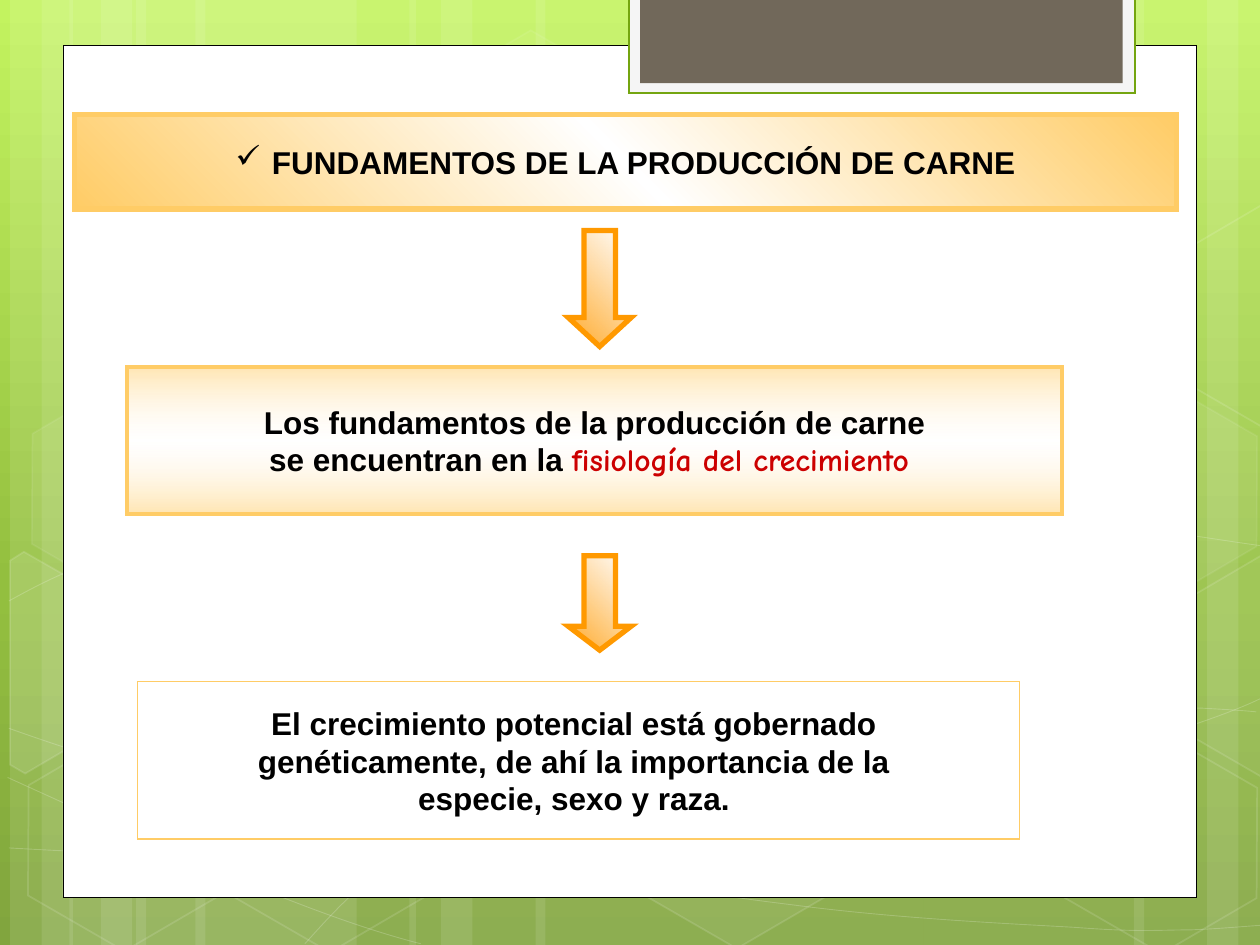
"""Build a flow slide on the foundations of meat production."""
from dataclasses import dataclass
from typing import Optional

from lxml import etree
from pptx import Presentation
from pptx import util as u
from pptx.dml.color import RGBColor
from pptx.enum import shapes, text
from pptx.oxml.ns import qn

COLORS = {
    "white": "FFFFFF", "black": "000000", "lime": "C3F35F", "leaf": "93BF3F",
    "moss": "81A53E", "tab": "F5F5F5", "tab_edge": "74A510", "taupe": "71685A",
    "amber": "FFCC66", "peach": "FFCC99", "orange": "FF9900", "red": "CC0000",
}
KIND = shapes.MSO_SHAPE


@dataclass
class Line:
    color: str
    width: float
    alpha: int = 100


@dataclass
class Gradient:
    stops: list
    angle: Optional[int] = None


@dataclass
class Hexagon:
    left: float
    top: float
    fill: int
    line: int


@dataclass
class Span:
    words: str
    color: str = "black"
    font: str = "Arial"


@dataclass
class Box:
    place: tuple
    gradient: Gradient
    width: float
    lines: list


BANDS = [(1.08, 1.75), (0.08, 0.5), (0.33, 0.83), (1.55, 1.75), (0.55, 0.5), (0.8, 0.83),
         (7.33, 1.75), (9.58, 0.5), (9, 0.83), (4.25, 3.08), (3.25, 0.5), (3.5, 0.83)]
CURVES = [
    [(0.07, 6.73), (0.61, 6.76), (1.15, 6.79), (1.9, 6.78), (2.65, 6.77), (3.58, 6.75),
     (4.58, 6.65), (5.58, 6.55), (7, 6.36), (7.92, 6.17), (8.83, 5.98), (9.77, 5.68), (10.07, 5.51)],
    [(0.07, 4.77), (0.36, 4.61), (0.65, 4.46), (1.21, 4.31), (1.78, 4.16), (2.59, 3.94),
     (3.47, 3.87), (4.36, 3.8), (5.44, 3.79), (6.54, 3.87), (7.64, 3.95), (9.47, 4.26), (10.07, 4.34)],
    [(0.06, 6.17), (1.27, 6.72), (2.47, 7.27), (3.34, 7.49)],
    [(0.07, 5.78), (0.38, 5.89), (0.7, 6), (1.28, 6.16), (1.86, 6.31), (2.73, 6.56),
     (3.57, 6.73), (4.4, 6.9), (5.45, 7.08), (6.28, 7.18), (7.11, 7.29), (8, 7.33),
     (8.53, 7.36), (9.05, 7.4), (9.19, 7.38), (9.45, 7.38), (9.71, 7.37), (9.89, 7.35), (10.07, 7.34)],
    [(2.42, 7.49), (2.6, 7.29), (2.78, 7.09), (3.02, 6.91), (3.26, 6.73), (3.6, 6.53),
     (3.88, 6.39), (4.16, 6.25), (4.33, 6.19), (4.7, 6.09), (5.06, 5.99), (5.73, 5.85),
     (6.08, 5.78), (6.44, 5.71), (6.49, 5.71), (6.8, 5.69), (7.11, 5.66), (7.6, 5.63),
     (7.94, 5.62), (8.29, 5.61), (8.86, 5.62), (8.86, 5.62), (9.08, 5.62), (9.31, 5.62),
     (9.53, 5.62), (9.71, 5.63), (9.88, 5.64), (9.97, 5.65)],
]
HEXAGONS = [
    Hexagon(3.34, 0.36, 4, 8), Hexagon(4.97, 5.89, 6, 12), Hexagon(0.11, 5.91, 0, 12),
    Hexagon(0.14, 3.12, 7, 8), Hexagon(1.74, 5.92, 0, 12), Hexagon(7.53, 4.53, 10, 12),
    Hexagon(8.34, 5.93, 0, 12), Hexagon(8.34, 3.14, 7, 8),
]
CUT_HEXAGONS = [
    ([(0.08, 4.45), (0.19, 4.38), (0.96, 4.82), (0.95, 5.7), (0.2, 6.14), (0.08, 6.07)], 10),
    ([(9.26, 4.85), (10.01, 4.41), (10.09, 4.46), (10.09, 6.13), (10.02, 6.17), (9.26, 5.73)], 4),
    ([(9.26, 2.07), (10.01, 1.63), (10.1, 1.68), (10.09, 3.35), (10.02, 3.39), (9.26, 2.95)], 0),
]
TITLE = Box((0.59, 0.91, 8.75, 0.75),
            Gradient([(0, "amber", 100), (50, "white", 100), (100, "amber", 100)], 315), 3,
            [[Span("FUNDAMENTOS DE LA PRODUCCIÓN DE CARNE")]])
BOXES = [
    Box((1.01, 2.91, 7.42, 1.17),
        Gradient([(0, "amber", 50), (50, "white", 13), (100, "amber", 50)], 90), 2.25,
        [[Span("Los fundamentos de la producción de carne")],
         [Span("se encuentran en la "),
          Span("fisiología del crecimiento ", "red", "Comic Neue")]]),
    Box((1.09, 5.41, 7, 1.25),
        Gradient([(0, "peach", 63), (100, "white", 35)]), 0.75,
        [[Span("El crecimiento potencial está gobernado ")],
         [Span("genéticamente, de ahí la importancia de la ")],
         [Span("especie, sexo y raza. ")]]),
]
ARROWS = [(1.83, 0.92, 0.46), (4.41, 0.75, 0.38)]
ARROW_FILL = Gradient([(0, "orange", 83), (100, "white", 80)], 315)


def add_node(parent, tag: str, **attributes):
    return etree.SubElement(parent, qn(tag), {k: str(v) for k, v in attributes.items()})


def paint_solid(fill, holder, color: str, alpha: int) -> None:
    fill.solid()
    fill.fore_color.rgb = RGBColor.from_string(COLORS[color])
    if alpha < 100:
        add_node(holder.find(".//" + qn("a:srgbClr")), "a:alpha", val=alpha * 1000)


def paint_gradient(fill, holder, gradient: Gradient) -> None:
    fill.solid()
    solid = holder.find(".//" + qn("a:solidFill"))
    node = etree.Element(qn("a:gradFill"), rotWithShape="1")
    stops = add_node(node, "a:gsLst")
    for position, color, alpha in gradient.stops:
        stop = add_node(stops, "a:gs", pos=position * 1000)
        add_node(add_node(stop, "a:srgbClr", val=COLORS[color]), "a:alpha", val=alpha * 1000)
    if gradient.angle is None:
        add_node(add_node(node, "a:path", path="rect"), "a:fillToRect", l=100000, b=100000)
    else:
        add_node(node, "a:lin", ang=gradient.angle * 60000, scaled=0)
    solid.getparent().replace(solid, node)


def style(shape, fill=None, alpha: int = 100, line: Optional[Line] = None) -> None:
    properties = shape.element.spPr
    shape.shadow.inherit = False
    if isinstance(fill, Gradient):
        paint_gradient(shape.fill, properties, fill)
    elif fill and alpha:
        paint_solid(shape.fill, properties, fill, alpha)
    else:
        shape.fill.background()
    if line is None:
        shape.line.fill.background()
        return
    shape.line.width = u.Pt(line.width)
    stroke = properties.find(qn("a:ln"))
    paint_solid(shape.line.fill, stroke, line.color, line.alpha)
    add_node(stroke, "a:miter", lim=800000)


def add_preset(page, kind, place: tuple, *look):
    shape = page.shapes.add_shape(kind, *map(u.Inches, place))
    style(shape, *look)
    return shape


def add_outline(page, points: list, closed: bool, *look):
    corners = [(u.Inches(x), u.Inches(y)) for x, y in points]
    builder = page.shapes.build_freeform(*corners[0])
    builder.add_line_segments(corners[1:], close=closed)
    shape = builder.convert_to_shape()
    style(shape, *look)
    return shape


def bend(shape) -> None:
    """Turn each three straight segments into one cubic curve."""
    segments = list(shape.element.iter(qn("a:lnTo")))
    for start in range(0, len(segments), 3):
        curve = etree.Element(qn("a:cubicBezTo"))
        segments[start].addprevious(curve)
        for segment in segments[start:start + 3]:
            curve.append(segment[0])
            segment.getparent().remove(segment)


def write_lines(shape, lines: list) -> None:
    frame = shape.text_frame
    frame.auto_size = text.MSO_AUTO_SIZE.NONE
    frame.word_wrap = False
    frame.vertical_anchor = text.MSO_ANCHOR.MIDDLE
    for index, spans in enumerate(lines):
        para = frame.add_paragraph() if index else frame.paragraphs[0]
        para.alignment = text.PP_ALIGN.CENTER
        for span in spans:
            run = para.add_run()
            run.text = span.words
            run.font.name, run.font.size, run.font.bold = span.font, u.Pt(18), True
            run.font.color.rgb = RGBColor.from_string(COLORS[span.color])


def draw_backdrop(page) -> None:
    paint_gradient(page.background.fill, page.element.find(".//" + qn("p:bg")),
                   Gradient([(0, "lime", 100), (62, "leaf", 100), (100, "moss", 100)], 90))
    for left, width in BANDS:
        add_preset(page, KIND.RECTANGLE, (left, 0, width, 7.5), "white", 10)
    for points in CURVES:
        bend(add_outline(page, points, False, None, 0, Line("white", 0.5, 20)))
    for item in HEXAGONS:
        hexagon = add_preset(page, KIND.HEXAGON, (item.left, item.top, 1.75, 1.52),
                             "white", item.fill, Line("white", 1, item.line))
        hexagon.adjustments[0] = 0.285
        hexagon.rotation = 30
    for points, alpha in CUT_HEXAGONS:
        add_outline(page, points, True, "white", alpha, Line("white", 1, 12))
    add_preset(page, KIND.RECTANGLE, (0.5, 0.36, 9, 6.76), "white", 100, Line("black", 0.5))
    add_preset(page, KIND.RECTANGLE, (4.99, -0.02, 4.02, 0.76), "tab", 100, Line("tab_edge", 1.25))
    add_preset(page, KIND.RECTANGLE, (5.08, -0.02, 3.83, 0.68), "taupe")


def draw_title(page) -> None:
    title = page.shapes.title
    title.left, title.top, title.width, title.height = map(u.Inches, TITLE.place)
    style(title, TITLE.gradient, 100, Line("amber", TITLE.width))
    write_lines(title, TITLE.lines)
    layout = title.text_frame.paragraphs[0]._p.get_or_add_pPr()
    layout.set("marL", str(u.Inches(0.29)))
    layout.set("indent", str(-u.Inches(0.29)))
    add_node(layout, "a:buFont", typeface="Wingdings")
    add_node(layout, "a:buChar", char="ü")
    title.element.getparent().append(title.element)


def main() -> None:
    deck = Presentation()
    deck.slide_width, deck.slide_height = u.Inches(10), u.Inches(7.5)
    page = deck.slides.add_slide(deck.slide_layouts[5])
    draw_backdrop(page)
    draw_title(page)
    for box in BOXES:
        shape = add_preset(page, KIND.RECTANGLE, box.place, box.gradient, 100, Line("amber", box.width))
        write_lines(shape, box.lines)
    for top, height, head in ARROWS:
        arrow = add_preset(page, KIND.DOWN_ARROW, (4.51, top, 0.5, height),
                           ARROW_FILL, 100, Line("orange", 3))
        arrow.adjustments[1] = head
    deck.save("out.pptx")


if __name__ == "__main__":
    main()
